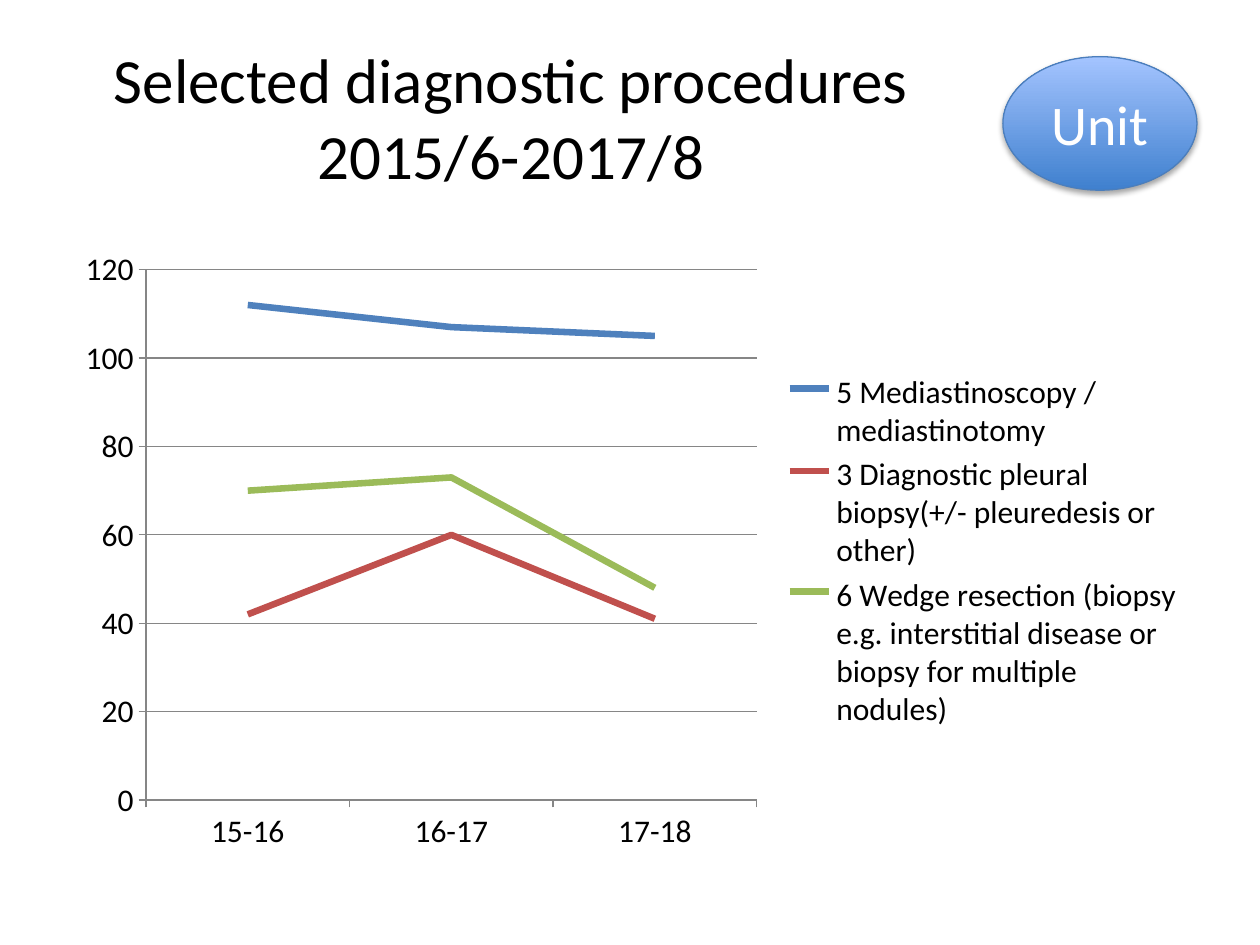
import pptx
import pptx.chart.data
import pptx.enum.chart
import pptx.enum.shapes
import pptx.enum.text
import pptx.oxml
import pptx.util
from pptx.dml.color import RGBColor
from pptx.util import Inches

BLACK = RGBColor(0x00, 0x00, 0x00)
WHITE = RGBColor(0xFF, 0xFF, 0xFF)
GRID_GREY = RGBColor(0x86, 0x86, 0x86)
BADGE_DARK = RGBColor(0x3F, 0x80, 0xCE)
BADGE_LIGHT = RGBColor(0xA4, 0xC4, 0xFF)
BADGE_LINE = RGBColor(0x4B, 0x7E, 0xBC)
BLUE = RGBColor(0x4F, 0x81, 0xBD)
RED = RGBColor(0xC0, 0x50, 0x4D)
GREEN = RGBColor(0x9B, 0xBB, 0x59)


def set_font(font, size, color):
    font.name = "Calibri"
    font.size = pptx.util.Pt(size)
    font.color.rgb = color


deck = pptx.Presentation()
deck.slide_width = Inches(10)
deck.slide_height = Inches(7.5)
page = deck.slides.add_slide(deck.slide_layouts[5])

# Title
title = page.shapes.title
title.left, title.top = Inches(0.5), Inches(0.3)
title.width, title.height = Inches(7.11), Inches(1.25)
title.text_frame.text = "Selected diagnostic procedures 2015/6-2017/8"
title.text_frame.vertical_anchor = pptx.enum.text.MSO_ANCHOR.MIDDLE
para = title.text_frame.paragraphs[0]
para.alignment = pptx.enum.text.PP_ALIGN.CENTER
set_font(para.runs[0].font, 36, BLACK)

# Line chart of procedures per year
procedures = [
    ("5 Mediastinoscopy / mediastinotomy", (112, 107, 105), BLUE),
    ("3 Diagnostic pleural biopsy(+/- pleuredesis or other)", (42, 60, 41), RED),
    ("6 Wedge resection (biopsy e.g. interstitial disease or biopsy for multiple nodules)",
     (70, 73, 48), GREEN),
]
chart_data = pptx.chart.data.CategoryChartData()
chart_data.categories = ["15-16", "16-17", "17-18"]
for name, values, color in procedures:
    chart_data.add_series(name, values)
chart = page.shapes.add_chart(
    pptx.enum.chart.XL_CHART_TYPE.LINE,
    Inches(0.5), Inches(1.89), Inches(9), Inches(4.96), chart_data).chart
chart.has_title = False
set_font(chart.font, 18, BLACK)

for series, (name, values, color) in zip(chart.plots[0].series, procedures):
    series.smooth = False
    series.marker.style = pptx.enum.chart.XL_MARKER_STYLE.NONE
    series.format.line.color.rgb = color
    series.format.line.width = pptx.util.Pt(3.75)

# Axes and legend
for axis in (chart.category_axis, chart.value_axis):
    axis.major_tick_mark = pptx.enum.chart.XL_TICK_MARK.OUTSIDE
    axis.format.line.color.rgb = GRID_GREY
    set_font(axis.tick_labels.font, 18, BLACK)
chart.value_axis.minimum_scale = 0
chart.value_axis.maximum_scale = 120
chart.value_axis.major_unit = 20
chart.value_axis.has_major_gridlines = True
chart.value_axis.major_gridlines.format.line.color.rgb = GRID_GREY
chart.has_legend = True
chart.legend.position = pptx.enum.chart.XL_LEGEND_POSITION.RIGHT
chart.legend.include_in_layout = False
set_font(chart.legend.font, 18, BLACK)

# Badge
badge = page.shapes.add_shape(
    pptx.enum.shapes.MSO_SHAPE.OVAL, Inches(7.96), Inches(0.45), Inches(1.54), Inches(1.06))
badge.fill.gradient()
badge.fill.gradient_angle = 90
for stop, color, position in zip(badge.fill.gradient_stops, (BADGE_DARK, BADGE_LIGHT), (0, 1)):
    stop.color.rgb = color
    stop.position = position
badge.line.color.rgb = BADGE_LINE
badge.line.width = pptx.util.Pt(0.75)
badge.text_frame.text = "Unit"
badge.text_frame.vertical_anchor = pptx.enum.text.MSO_ANCHOR.MIDDLE
para = badge.text_frame.paragraphs[0]
para.alignment = pptx.enum.text.PP_ALIGN.CENTER
set_font(para.runs[0].font, 32, WHITE)

# Soft shadow under the badge
badge.shadow.inherit = False
effects = badge._element.spPr.find(pptx.oxml.ns.qn("a:effectLst"))
effects.append(pptx.oxml.parse_xml(
    '<a:outerShdw xmlns:a="http://schemas.openxmlformats.org/drawingml/2006/main"'
    ' blurRad="40000" dist="23000" dir="5400000" rotWithShape="0">'
    '<a:srgbClr val="000000"><a:alpha val="35000"/></a:srgbClr></a:outerShdw>'))

deck.save("out.pptx")
